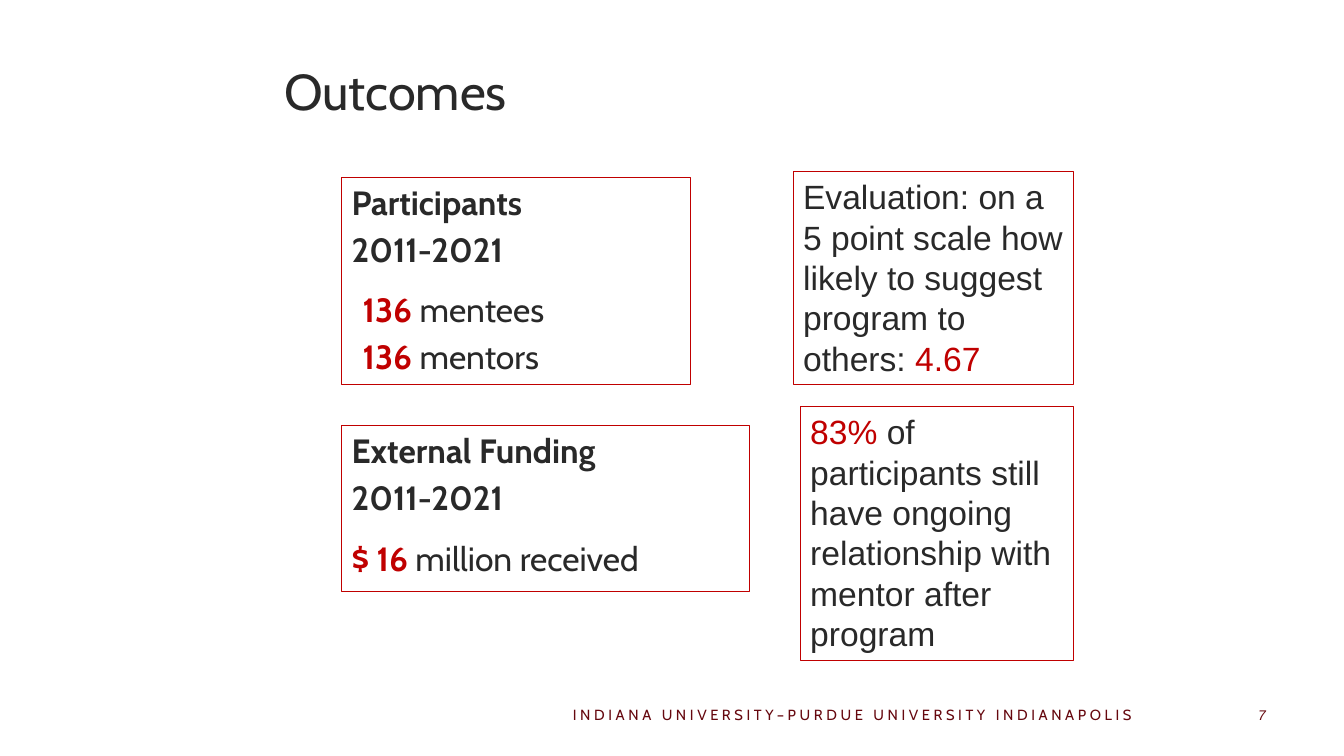
import pptx
import pptx.dml.color
import pptx.enum.shapes
import pptx.enum.text
import pptx.oxml
import pptx.util

Cm = pptx.util.Cm
Pt = pptx.util.Pt
ANCHOR = pptx.enum.text.MSO_ANCHOR
ALIGN = pptx.enum.text.PP_ALIGN

DARK = "292929"
RED = "C00000"
MAROON = "66080F"

SHADOW = (
    '<a:effectLst xmlns:a="http://schemas.openxmlformats.org/drawingml/2006/main">'
    '<a:outerShdw blurRad="38100" dist="38100" dir="2700000" algn="tl">'
    '<a:srgbClr val="000000"><a:alpha val="43000"/></a:srgbClr>'
    '</a:outerShdw></a:effectLst>'
)


def rgb(value):
    return pptx.dml.color.RGBColor.from_string(value)


def add_frame(slide, box, anchor=ANCHOR.TOP, outlined=False):
    lengths = [Cm(v) for v in box]
    if outlined:
        sp = slide.shapes.add_shape(pptx.enum.shapes.MSO_SHAPE.RECTANGLE, *lengths)
        sp.shadow.inherit = False
        sp.fill.background()
        sp.line.color.rgb = rgb(RED)
        sp.line.width = Pt(0.75)
    else:
        sp = slide.shapes.add_textbox(*lengths)
    tf = sp.text_frame
    tf.word_wrap = True
    tf.vertical_anchor = anchor
    return tf


def write_paragraphs(tf, paragraphs, font, size, align=ALIGN.LEFT, space=0):
    for i, runs in enumerate(paragraphs):
        p = tf.add_paragraph() if i else tf.paragraphs[0]
        p.alignment = align
        if i:
            p.space_before = Pt(space)
        p.font.name = font
        p.font.size = Pt(size)
        for text, color, bold in runs:
            r = p.add_run()
            r.text = text
            r.font.color.rgb = rgb(color)
            r.font.bold = bold


def add_title(slide, box, text):
    tf = add_frame(slide, box, ANCHOR.MIDDLE)
    write_paragraphs(tf, [[(text, DARK, False)]], "Cabin", 36)
    rPr = tf.paragraphs[0].runs[0].font._element
    rPr.append(pptx.oxml.parse_xml(SHADOW))


def add_result(slide, box, heading, figures, indent, drop, detail_size):
    left, top, width, height = box
    tf = add_frame(slide, box, outlined=True)
    lines = [[(text, DARK, True)] for text in (heading, "2011-2021")]
    write_paragraphs(tf, lines, "Cabin", 24, space=4.8)
    tf = add_frame(slide, (left + indent, top + drop, *detail_size))
    lines = [[(number, RED, True), (label, DARK, False)] for number, label in figures]
    write_paragraphs(tf, lines, "Cabin", 24, space=4.8)


def add_feedback(slide, box, runs):
    tf = add_frame(slide, box, outlined=True)
    write_paragraphs(tf, [[(text, color, False) for text, color in runs]], "Arial", 24)


def add_footer(slide, box, institution, number):
    left, top, width, height = box
    tf = add_frame(slide, (left, top, 15.11, height), ANCHOR.MIDDLE)
    write_paragraphs(tf, [[(institution, MAROON, False)]], "Cabin", 10.5, ALIGN.RIGHT)
    tf.paragraphs[0].runs[0].font._element.set("spc", "260")
    tf = add_frame(slide, (left + width - 3.02, top, 3.02, height), ANCHOR.MIDDLE)
    write_paragraphs(tf, [[(number, MAROON, False)]], "Arial", 10, ALIGN.RIGHT)
    tf.paragraphs[0].font.italic = True


def main():
    prs = pptx.Presentation()
    prs.slide_width = Cm(33.87)
    prs.slide_height = Cm(19.05)
    slide = prs.slides.add_slide(prs.slide_layouts[6])
    add_title(slide, (6.91, 0.76, 25.25, 3.02), "Outcomes")
    add_result(slide, (8.61, 4.47, 8.79, 5.23), "Participants",
               [("136", " mentees"), ("136", " mentors")], 0.28, 2.69, (9.7, 2.9))
    add_result(slide, (8.61, 10.72, 10.29, 4.19), "External Funding",
               [("$ 16", " million received")], 0, 2.72, (10.29, 2.39))
    add_feedback(slide, (19.99, 4.32, 7.06, 5.38), [
        ("Evaluation: on a 5 point scale how likely to suggest program to others: ", DARK),
        ("4.67", RED)])
    add_feedback(slide, (20.17, 10.24, 6.88, 6.4), [
        ("83% ", RED),
        ("of participants still have ongoing relationship with mentor after program", DARK)])
    add_footer(slide, (13.69, 17.5, 18.46, 1.02),
               "INDIANA UNIVERSITY–PURDUE UNIVERSITY INDIANAPOLIS", "7")
    prs.save("out.pptx")


if __name__ == "__main__":
    main()
